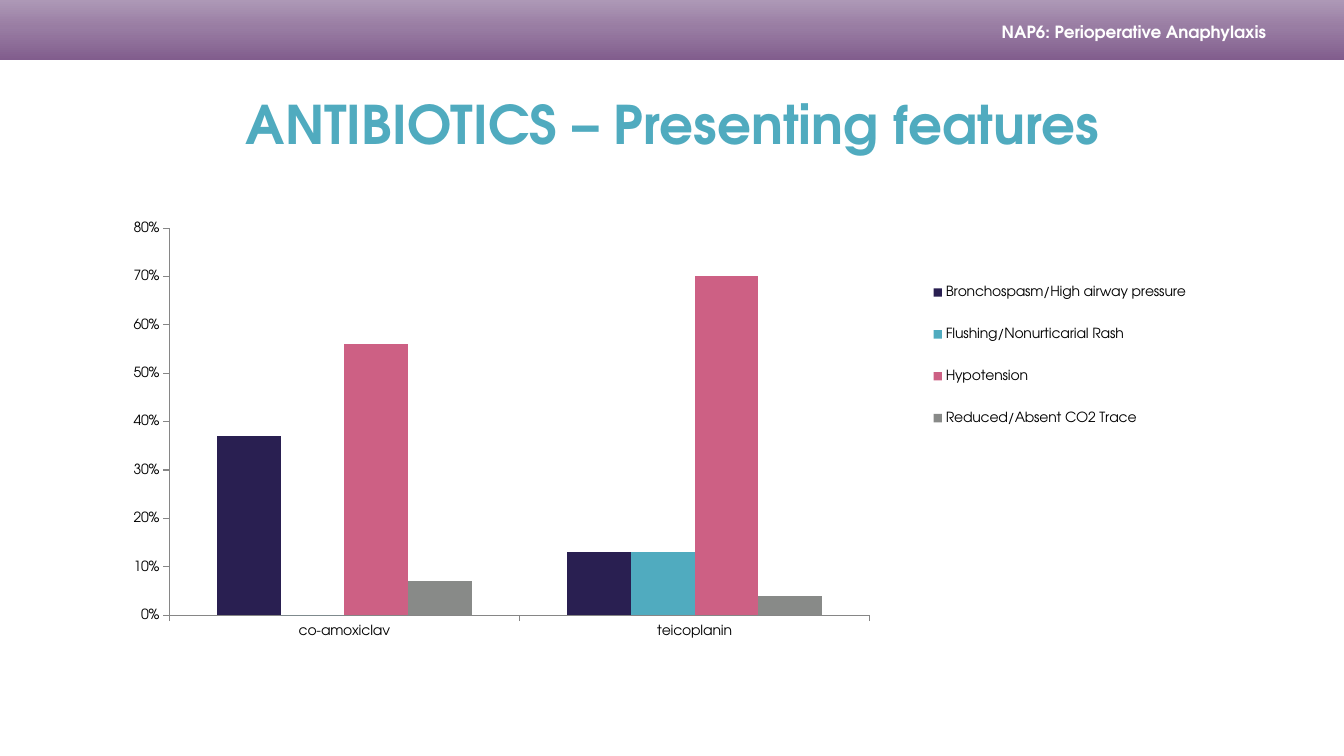
from copy import deepcopy

from lxml import etree
from pptx import Presentation
from pptx import util as u
from pptx.chart.data import CategoryChartData
from pptx.dml.color import RGBColor
from pptx.enum import chart as ch, shapes, text
from pptx.oxml.ns import qn

FONT = "TeX Gyre Adventor"
WIDE, HIGH = 13.33, 7.5
STOPS = [(0, "815D8D"), (0.55, "997DA3"), (1, "AD98B6")]
CATS = ["co-amoxiclav", "teicoplanin"]
SERIES = [
    ("Bronchospasm/High airway pressure", "291F51", (0.37, 0.13)),
    ("Flushing/Nonurticarial Rash", "50ABBF", (0, 0.13)),
    ("Hypotension", "CD6084", (0.56, 0.7)),
    ("Reduced/Absent CO2 Trace", "888A88", (0.07, 0.04)),
]


def tint(code):
    return RGBColor.from_string(code)


def inch(box):
    return [u.Inches(n) for n in box]


def style(font, size, code, bold=False):
    font.name, font.size, font.bold = FONT, u.Pt(size), bold
    font.color.rgb = tint(code)


def label(slide, box, words, size, code, align, right=0.1):
    frame = slide.shapes.add_textbox(*inch(box)).text_frame
    frame.word_wrap = True
    frame.vertical_anchor = text.MSO_ANCHOR.MIDDLE
    frame.margin_right = u.Inches(right)
    para = frame.paragraphs[0]
    para.alignment = align
    run = para.add_run()
    run.text = words
    style(run.font, size, code, True)


def banner(slide, box):
    left, top, width, height = box
    bar = slide.shapes.add_shape(shapes.MSO_SHAPE.RECTANGLE, *inch(box))
    bar.shadow.inherit = False
    bar.line.fill.background()
    bar.fill.gradient()
    bar.fill.gradient_angle = 90
    stops = bar.fill._fill._gradFill.find(qn("a:gsLst"))
    stops.append(deepcopy(stops[-1]))
    for stop, (place, code) in zip(bar.fill.gradient_stops, STOPS):
        stop.position = place
        stop.color.rgb = tint(code)
    label(slide, (left + width - 4.98, top + 0.18, 4.45, 0.28),
          "NAP6: Perioperative Anaphylaxis", 12, "FFFFFF",
          text.PP_ALIGN.RIGHT, 0.24)


def title(slide, box):
    label(slide, box, "ANTIBIOTICS – Presenting features", 38, "50ABBF",
          text.PP_ALIGN.CENTER)


def layout(owner, box, inner=False):
    for old in owner.findall(qn("c:layout")):
        owner.remove(old)
    frame = etree.Element(qn("c:layout"))
    hand = etree.SubElement(frame, qn("c:manualLayout"))
    parts = [("layoutTarget", "inner")] if inner else []
    parts += [("xMode", "edge"), ("yMode", "edge"), *zip("xywh", box)]
    for name, value in parts:
        etree.SubElement(hand, qn("c:" + name)).set("val", str(value))
    owner.insert(0 if inner else 1, frame)


def graph(slide, box):
    data = CategoryChartData(number_format="0%")
    data.categories = CATS
    for name, code, values in SERIES:
        data.add_series(name, values)
    kind = ch.XL_CHART_TYPE.COLUMN_CLUSTERED
    chart = slide.shapes.add_chart(kind, *inch(box), data).chart
    style(chart.font, 10, "000000")
    chart.has_title = False
    plot = chart.plots[0]
    plot.gap_width, plot.overlap = 150, 0
    plot.vary_by_categories = False
    for bars, (name, code, values) in zip(plot.series, SERIES):
        bars.format.fill.solid()
        bars.format.fill.fore_color.rgb = tint(code)
    for axis in (chart.category_axis, chart.value_axis):
        axis.has_major_gridlines = False
        axis.major_tick_mark = ch.XL_TICK_MARK.OUTSIDE
        axis.format.line.color.rgb = tint("868686")
        axis.format.line.width = u.Pt(0.75)
    axis.minimum_scale, axis.maximum_scale, axis.major_unit = 0, 0.8, 0.1
    axis.tick_labels.number_format = "0%"
    axis.tick_labels.number_format_is_linked = False
    chart.has_legend = True
    chart.legend.position = ch.XL_LEGEND_POSITION.RIGHT
    chart.legend.include_in_layout = False
    area = chart.element.find(qn("c:chart"))
    layout(area.find(qn("c:plotArea")), (0.084, 0.047, 0.579, 0.846), True)
    layout(area.find(qn("c:legend")), (0.7, 0.11, 0.24, 0.43))


def main():
    deck = Presentation()
    deck.slide_width, deck.slide_height = inch((WIDE, HIGH))
    slide = deck.slides.add_slide(deck.slide_layouts[6])
    banner(slide, (0, 0, WIDE, 0.6))
    title(slide, (0.67, 0.6, 12, 1.25))
    graph(slide, (0.67, 2.05, 12, 4.54))
    deck.save("out.pptx")


if __name__ == "__main__":
    main()
